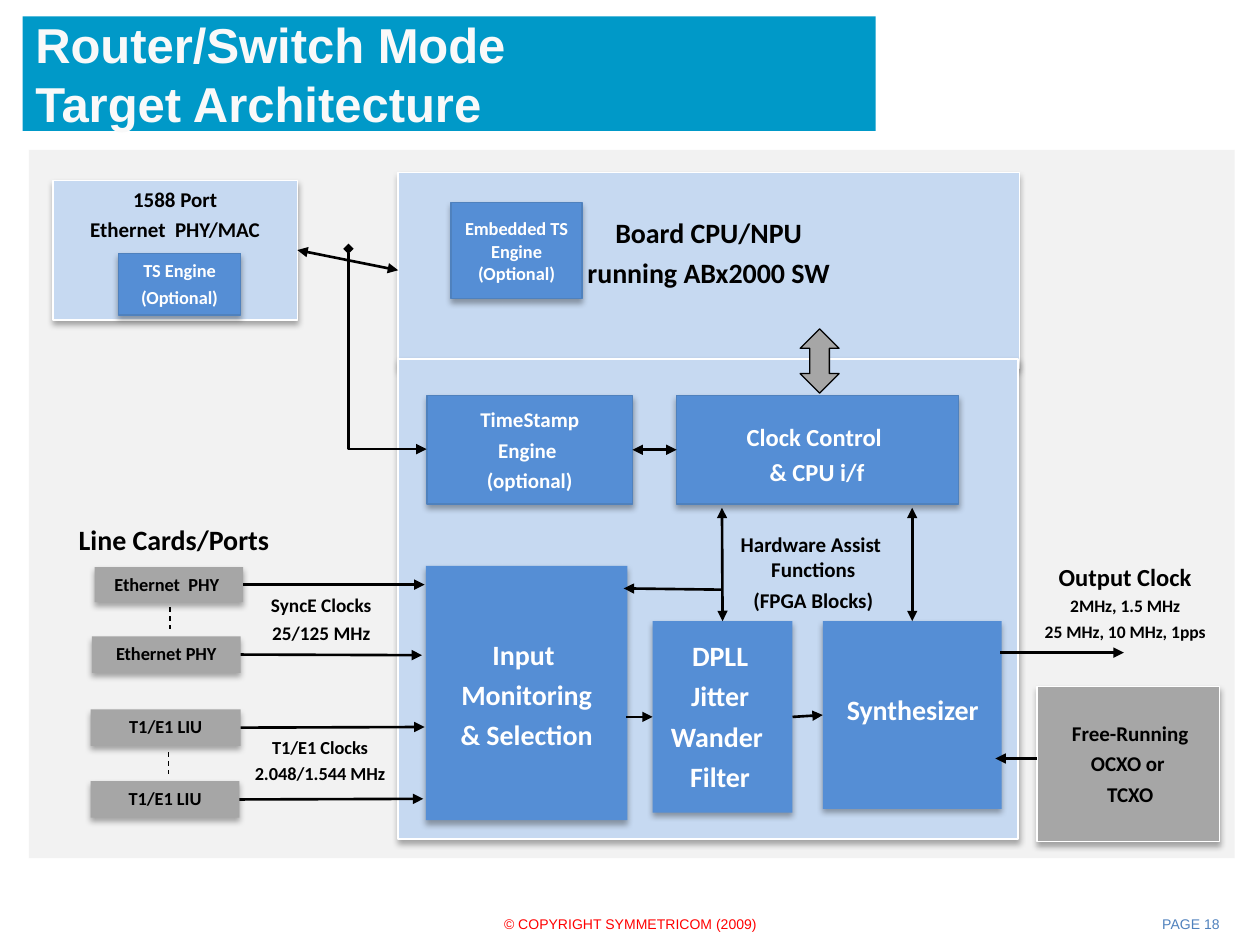
from dataclasses import dataclass

from lxml.etree import SubElement
from pptx import Presentation
from pptx.dml.color import RGBColor
from pptx.enum.dml import MSO_LINE
from pptx.enum.shapes import MSO_CONNECTOR, MSO_SHAPE
from pptx.enum.text import MSO_ANCHOR, MSO_AUTO_SIZE, PP_ALIGN
from pptx.oxml.ns import qn
from pptx.util import Inches, Pt


@dataclass(frozen=True)
class Theme:
    banner: str = "0099C8"
    banner_text: str = "F9F9F9"
    panel: str = "F2F2F2"
    zone: str = "C6D9F1"
    block: str = "558ED5"
    edge: str = "4F81BD"
    gray: str = "A6A6A6"
    black: str = "000000"
    white: str = "FFFFFF"
    red: str = "FF0000"
    head_font: str = "Arial"
    font: str = "Calibri"
    title: float = 28
    large: float = 16
    medium: float = 14
    normal: float = 12
    clock: float = 11
    small: float = 10.5
    tiny: float = 10
    footer: float = 8


T = Theme()


def write(sp, lines, sizes, color, font=T.font, bold=True, align=PP_ALIGN.CENTER, **frame):
    tf = sp.text_frame
    frame_format = {
        "word_wrap": True, "auto_size": MSO_AUTO_SIZE.NONE, "vertical_anchor": MSO_ANCHOR.TOP,
        "margin_left": Inches(0.05), "margin_right": Inches(0.05),
        "margin_top": Inches(0.05), "margin_bottom": Inches(0.05), **frame,
    }
    for name, value in frame_format.items():
        setattr(tf, name, value)
    for i, line in enumerate(lines):
        p = tf.paragraphs[0] if i == 0 else tf.add_paragraph()
        p.text = line
        size = sizes[min(i, len(sizes) - 1)]
        p.alignment = align
        p.space_before = Pt(round(0.24 * size, 1) if i else 0)
        for r in p.runs:
            for name, value in {"name": font, "size": Pt(size), "bold": bold}.items():
                setattr(r.font, name, value)
            r.font.color.rgb = RGBColor.from_string(color)


def connect(start, end, width=1.5, head=None, tail=None, kind=MSO_CONNECTOR.STRAIGHT):
    cx = s.shapes.add_connector(kind, *map(Inches, start + end))
    cx.line.color.rgb = RGBColor.from_string(T.black)
    cx.line.width = Pt(width)
    ln = cx.line._get_or_add_ln()
    for tag, arrow in (("a:headEnd", head), ("a:tailEnd", tail)):
        if arrow:
            SubElement(ln, qn(tag), type=arrow)
    SubElement(cx._element.spPr, qn("a:effectLst"))
    return cx


prs = Presentation()
prs.slide_width, prs.slide_height = Inches(10), Inches(7.5)
s = prs.slides.add_slide(prs.slide_layouts[5])

title = s.shapes.title
for name, value in {"left": 0.18, "top": 0.13, "width": 6.77, "height": 0.91}.items():
    setattr(title, name, Inches(value))
title.fill.solid()
title.fill.fore_color.rgb = RGBColor.from_string(T.banner)
write(title, ["Router/Switch Mode \vTarget Architecture"], [T.title], T.banner_text, T.head_font,
      align=PP_ALIGN.LEFT, vertical_anchor=MSO_ANCHOR.MIDDLE, margin_left=Inches(0.1))

blocks = [
    ("panel", (0.23, 1.19, 9.57, 5.62), T.panel, None, False),
    ("cpu", (3.16, 1.37, 4.93, 1.55), T.zone, (T.white, 0.75), True),
    ("fpga", (3.16, 2.85, 4.92, 3.81), T.zone, (T.white, 1), True),
    ("port", (0.42, 1.43, 1.94, 1.11), T.zone, (T.white, 0.75), True),
    ("input", (3.38, 4.49, 1.6, 2.02), T.block, None, True),
    ("synth", (6.53, 4.93, 1.42, 1.49), T.block, None, True),
    ("dpll", (5.18, 4.93, 1.11, 1.52), T.block, None, True),
    ("phy1", (0.75, 4.5, 1.18, 0.28), T.gray, None, True),
    ("phy2", (0.73, 5.05, 1.18, 0.29), T.gray, None, True),
    ("liu1", (0.72, 5.63, 1.19, 0.29), T.gray, None, True),
    ("liu2", (0.72, 6.2, 1.18, 0.29), T.gray, None, True),
    ("stamp", (3.39, 3.14, 1.63, 0.86), T.block, (T.edge, 0.75), True),
    ("control", (5.37, 3.14, 2.24, 0.86), T.block, (T.edge, 0.75), True),
    ("oscillator", (8.23, 5.45, 1.45, 1.23), T.gray, (T.white, 0.75), True),
    ("embedded", (3.58, 1.61, 1.04, 0.76), T.block, (T.edge, 0.75), True),
    ("ts_engine", (0.94, 2.01, 0.97, 0.49), T.block, (T.edge, 0.75), True),
    ("input_label", (3.48, 5.01, 1.4, 1.02), T.block, None, False),
    ("synth_label", (6.58, 5.45, 1.33, 0.37), T.block, None, False),
    ("dpll_label", (5.24, 5.02, 0.95, 1.34), T.block, None, False),
    ("stamp_label", (3.44, 3.18, 1.53, 0.79), T.block, None, False),
    ("control_label", (5.53, 3.3, 1.91, 0.62), T.block, None, False),
    ("oscillator_label", (8.35, 5.67, 1.24, 0.79), T.gray, None, False),
    ("line_cards", (0.37, 4.1, 2.02, 0.37), T.panel, None, False),
    ("output", (8.18, 4.41, 1.5, 0.74), T.panel, None, False),
    ("assist", (5.67, 4.17, 1.57, 0.75), T.zone, None, False),
    ("sync_clocks", (1.98, 4.66, 1.14, 0.51), T.panel, None, False),
    ("bus", (6.35, 2.61, 0.31, 0.51), T.gray, (T.black, 0.75), False),
]
box = {}
for name, place, fill, line, shadow in blocks:
    preset = MSO_SHAPE.UP_DOWN_ARROW if name == "bus" else MSO_SHAPE.RECTANGLE
    sp = box[name] = s.shapes.add_shape(preset, *map(Inches, place))
    sp.fill.solid()
    sp.fill.fore_color.rgb = RGBColor.from_string(fill)
    if line:
        sp.line.color.rgb = RGBColor.from_string(line[0])
        sp.line.width = Pt(line[1])
    else:
        sp.line.fill.background()
    sp.shadow.inherit = False
    if shadow:
        effects = sp._element.spPr.find(qn("a:effectLst"))
        outer = SubElement(effects, qn("a:outerShdw"), blurRad=str(Pt(3.5)), dist=str(Pt(2.2)),
                           dir="5400000", rotWithShape="0")
        shade = SubElement(outer, qn("a:srgbClr"), val=T.black)
        SubElement(shade, qn("a:alpha"), val="32000")

for name, place in (("t1_clocks", (1.9, 5.79, 1.28, 0.49)), ("copyright", (3.42, 7.22, 3.17, 0.23)),
                    ("page", (7.45, 7.22, 2.33, 0.23))):
    box[name] = s.shapes.add_textbox(*map(Inches, place))

labels = [
    ("port", ["1588 Port", "Ethernet  PHY/MAC"], [T.normal], T.black),
    ("input_label", ["Input ", "Monitoring", "& Selection"], [T.large], T.white),
    ("synth_label", ["Synthesizer"], [T.large], T.white),
    ("dpll_label", ["DPLL", "Jitter", "Wander ", "Filter"], [T.large], T.white),
    ("phy1", ["Ethernet  PHY "], [T.small], T.black),
    ("phy2", ["Ethernet PHY"], [T.small], T.black),
    ("liu1", ["T1/E1 LIU"], [T.small], T.black),
    ("liu2", ["T1/E1 LIU"], [T.small], T.black),
    ("stamp_label", ["TimeStamp", "Engine ", "(optional)"], [T.normal], T.white),
    ("control_label", ["Clock Control ", "& CPU i/f"], [T.medium], T.white),
    ("oscillator_label", ["Free-Running", "OCXO or ", "TCXO"], [T.normal], T.black),
    ("ts_engine", ["TS Engine", "(Optional)"], [T.small], T.white),
    ("line_cards", ["Line Cards/Ports"], [T.large], T.black),
    ("output", ["Output Clock", "2MHz, 1.5 MHz", "25 MHz, 10 MHz, 1pps"], [T.medium, T.tiny], T.black),
    ("assist", ["Hardware Assist  Functions", "(FPGA Blocks)"], [T.normal], T.black),
    ("sync_clocks", ["SyncE Clocks", "25/125 MHz"], [T.clock], T.black),
    ("t1_clocks", ["T1/E1 Clocks", "2.048/1.544 MHz"], [T.small], T.black),
]
for name, lines, sizes, color in labels:
    write(box[name], lines, sizes, color)
write(box["cpu"], ["Board CPU/NPU", "running ABx2000 SW"], [T.large], T.black, margin_top=Inches(0.34))
write(box["embedded"], ["Embedded TS Engine (Optional)"], [T.small], T.white,
      vertical_anchor=MSO_ANCHOR.MIDDLE)
write(box["copyright"], ["© COPYRIGHT SYMMETRICOM (2009)"], [T.footer], T.red, T.head_font, False)
write(box["page"], ["PAGE 18"], [T.footer], T.edge, T.head_font, False, PP_ALIGN.RIGHT,
      margin_right=Inches(0.1))

arrow = "triangle"
links = [
    ((2.36, 1.98), (3.16, 2.14), arrow, arrow, ("port", 3), ("cpu", 1)),
    ((5.02, 3.57), (5.37, 3.57), arrow, arrow, ("stamp", 3), ("control", 1)),
    ((4.97, 5.69), (5.18, 5.69), None, arrow, None, ("dpll", 1)),
    ((6.29, 5.69), (6.53, 5.68), None, arrow, ("dpll", 3), ("synth", 1)),
    ((5.73, 4.03), (5.73, 4.93), arrow, arrow, None, ("dpll", 0)),
    ((7.24, 4.03), (7.24, 4.93), arrow, arrow, None, ("synth", 0)),
    ((4.95, 4.67), (5.73, 4.68), arrow, None, None, None),
    ((8.23, 6.02), (7.9, 6.02), None, arrow, None, None),
    ((7.94, 5.18), (8.92, 5.18), None, arrow, None, None),
    ((1.93, 4.64), (3.37, 4.64), None, arrow, ("phy1", 3), None),
    ((1.91, 5.2), (3.35, 5.2), None, arrow, ("phy2", 3), None),
    ((1.91, 5.77), (3.37, 5.77), None, arrow, ("liu1", 3), None),
    ((1.9, 6.34), (3.36, 6.34), None, arrow, ("liu2", 3), None),
]
for start, end, head, tail, source, target in links:
    cx = connect(start, end, head=head, tail=tail)
    if source:
        cx.begin_connect(box[source[0]], source[1])
    if target:
        cx.end_connect(box[target[0]], target[1])

for x, y in ((1.35, 4.82), (1.34, 5.97)):
    connect((x, y), (x, y + 0.17), width=0.75).line.dash_style = MSO_LINE.DASH

elbow = connect((3.87, 2.46), (2.28, 3.08), head="diamond", tail=arrow, kind=MSO_CONNECTOR.ELBOW)
elbow._element.spPr.find(qn("a:prstGeom")).set("prst", "bentConnector2")
elbow._element.spPr.find(qn("a:xfrm")).set("rot", str(270 * 60000))

prs.save("out.pptx")
